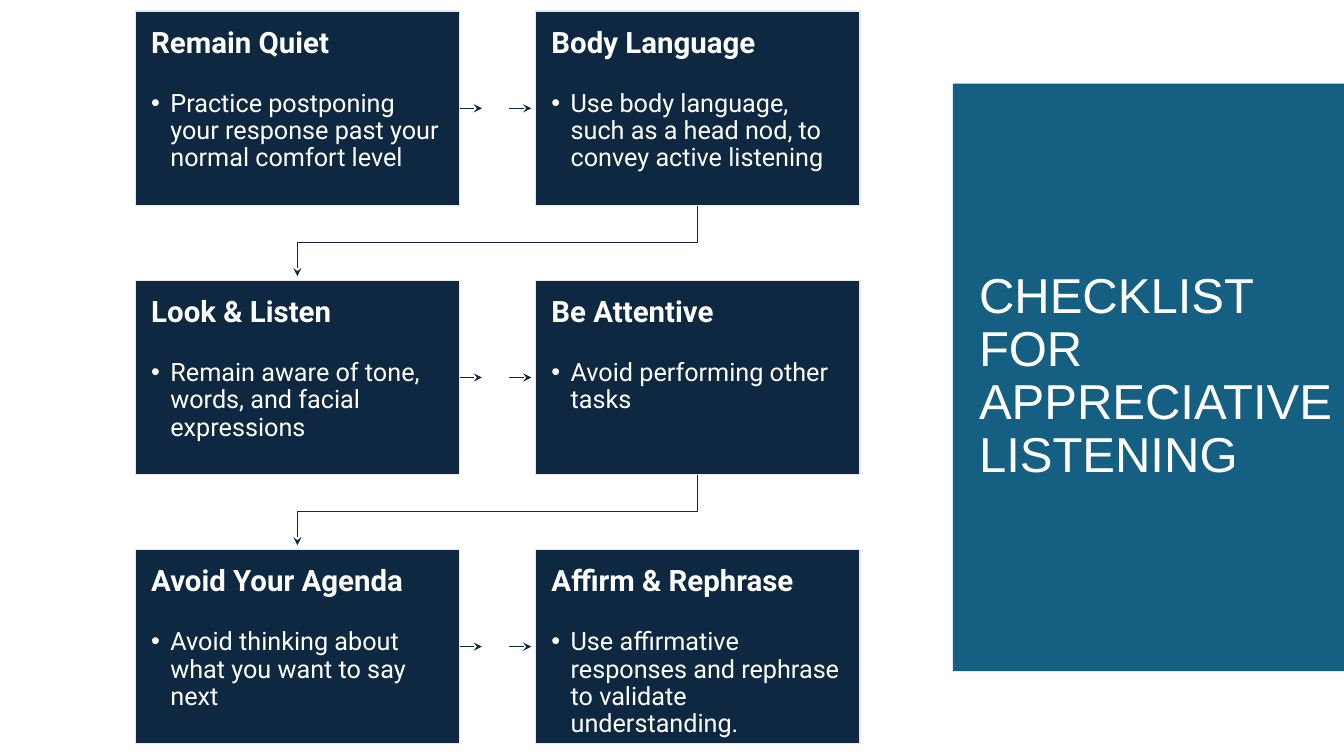
from lxml.etree import SubElement
from pptx import Presentation
from pptx.dml.color import RGBColor
from pptx.enum.shapes import MSO_CONNECTOR, MSO_SHAPE
from pptx.enum.text import MSO_ANCHOR, MSO_AUTO_SIZE, PP_ALIGN
from pptx.oxml.ns import qn
from pptx.util import Inches, Pt

HEADING = "CHECKLIST FOR APPRECIATIVE LISTENING"
STEPS = [
    ("Remain Quiet", "Practice postponing your response past your normal comfort level"),
    ("Body Language", "Use body language, such as a head nod, to convey active listening"),
    ("Look & Listen", "Remain aware of tone, words, and facial expressions"),
    ("Be Attentive", "Avoid performing other tasks"),
    ("Avoid Your Agenda", "Avoid thinking about what you want to say next"),
    ("Affirm & Rephrase", "Use affirmative responses and rephrase to validate understanding."),
]

NAVY = RGBColor(0x0E, 0x28, 0x41)
TEAL = RGBColor(0x15, 0x60, 0x82)
PALE = RGBColor(0xE8, 0xE8, 0xE8)
WHITE = RGBColor(0xFF, 0xFF, 0xFF)

COLUMNS = 2
LEFT, TOP = 1.34, 0.11
CARD_W, CARD_H = 3.22, 1.93
PITCH_X, PITCH_Y = 3.97, 2.67
DASH = 0.22
ARROW_END = 0.04


def style_text(paragraph, font_name, size, bold=False):
    paragraph.alignment = PP_ALIGN.LEFT
    paragraph.line_spacing = 0.9
    for run in paragraph.runs:
        run.font.name = font_name
        run.font.size = Pt(size)
        run.font.bold = bold
        run.font.color.rgb = WHITE


def add_bullet(paragraph):
    properties = paragraph._p.get_or_add_pPr()
    properties.set("marL", str(Inches(0.19)))
    properties.set("indent", str(Inches(-0.19)))
    SubElement(properties, qn("a:buFont"), typeface="Arial")
    SubElement(properties, qn("a:buChar"), char="•")


def add_card(slide, x, y, step, advice):
    card = slide.shapes.add_shape(
        MSO_SHAPE.RECTANGLE, Inches(x), Inches(y), Inches(CARD_W), Inches(CARD_H))
    card.shadow.inherit = False
    card.fill.solid()
    card.fill.fore_color.rgb = NAVY
    card.line.color.rgb = PALE
    card.line.width = Pt(0.85)
    frame = card.text_frame
    frame.word_wrap = True
    frame.vertical_anchor = MSO_ANCHOR.TOP
    frame.margin_left = frame.margin_right = Inches(0.16)
    frame.margin_top = frame.margin_bottom = Inches(0.17)
    frame.text = step
    style_text(frame.paragraphs[0], "Roboto", 21, bold=True)
    detail = frame.add_paragraph()
    detail.text = advice
    style_text(detail, "Roboto", 18)
    detail.space_before = Pt(22)
    add_bullet(detail)
    return card


def style_arrow(arrow):
    arrow.line.color.rgb = NAVY
    arrow.line.width = Pt(0.75)
    SubElement(arrow.line._get_or_add_ln(), qn("a:tailEnd"), type="stealth")
    if arrow._element.spPr.find(qn("a:effectLst")) is None:
        SubElement(arrow._element.spPr, qn("a:effectLst"))


def add_dash(slide, start, y):
    dash = slide.shapes.add_connector(
        MSO_CONNECTOR.STRAIGHT, Inches(start), Inches(y), Inches(start + DASH), Inches(y))
    style_arrow(dash)
    return dash


def add_return_arrow(slide, y):
    right = LEFT + PITCH_X + CARD_W / 2
    left = LEFT + CARD_W / 2
    turn = y + (PITCH_Y - CARD_H) / 2
    end = y + PITCH_Y - CARD_H - ARROW_END
    outline = slide.shapes.build_freeform(Inches(right), Inches(y))
    corners = [(right, turn), (left, turn), (left, end)]
    outline.add_line_segments([(Inches(cx), Inches(cy)) for cx, cy in corners], close=False)
    bend = outline.convert_to_shape()
    bend.shadow.inherit = False
    bend.fill.background()
    style_arrow(bend)


def add_heading(slide):
    panel = slide.shapes.add_shape(
        MSO_SHAPE.RECTANGLE, Inches(9.45), Inches(0.83), Inches(3.88), Inches(5.83))
    panel.shadow.inherit = False
    panel.fill.solid()
    panel.fill.fore_color.rgb = TEAL
    panel.line.fill.background()
    title = slide.shapes.title
    panel._element.addnext(title._element)
    title.left, title.top = Inches(9.61), Inches(1.23)
    title.width, title.height = Inches(3.72), Inches(5.03)
    frame = title.text_frame
    frame.text = HEADING
    frame.word_wrap = True
    frame.auto_size = MSO_AUTO_SIZE.NONE
    frame.vertical_anchor = MSO_ANCHOR.MIDDLE
    style_text(frame.paragraphs[0], "Arial", 35)


def main():
    """Build the appreciative listening checklist slide."""
    deck = Presentation()
    deck.slide_width, deck.slide_height = Inches(13.33), Inches(7.5)
    slide = deck.slides.add_slide(deck.slide_layouts[5])
    add_heading(slide)
    last_row = (len(STEPS) - 1) // COLUMNS
    for index, (step, advice) in enumerate(STEPS):
        row, column = divmod(index, COLUMNS)
        x, y = LEFT + column * PITCH_X, TOP + row * PITCH_Y
        card = add_card(slide, x, y, step, advice)
        if column == 0:
            middle = y + CARD_H / 2
            add_dash(slide, x + CARD_W, middle).begin_connect(card, 3)
            add_dash(slide, x + PITCH_X - ARROW_END - DASH, middle)
        elif row < last_row:
            add_return_arrow(slide, y + CARD_H)
    deck.save("out.pptx")


if __name__ == "__main__":
    main()
